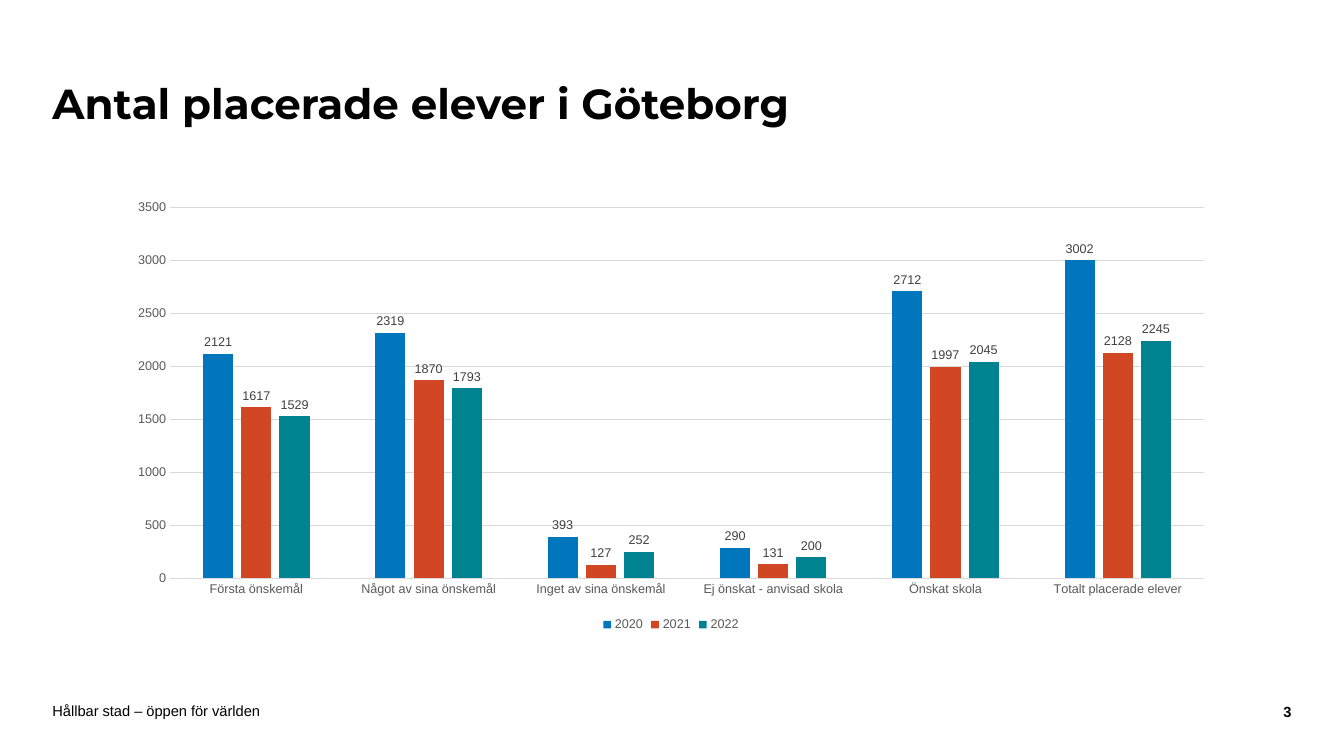
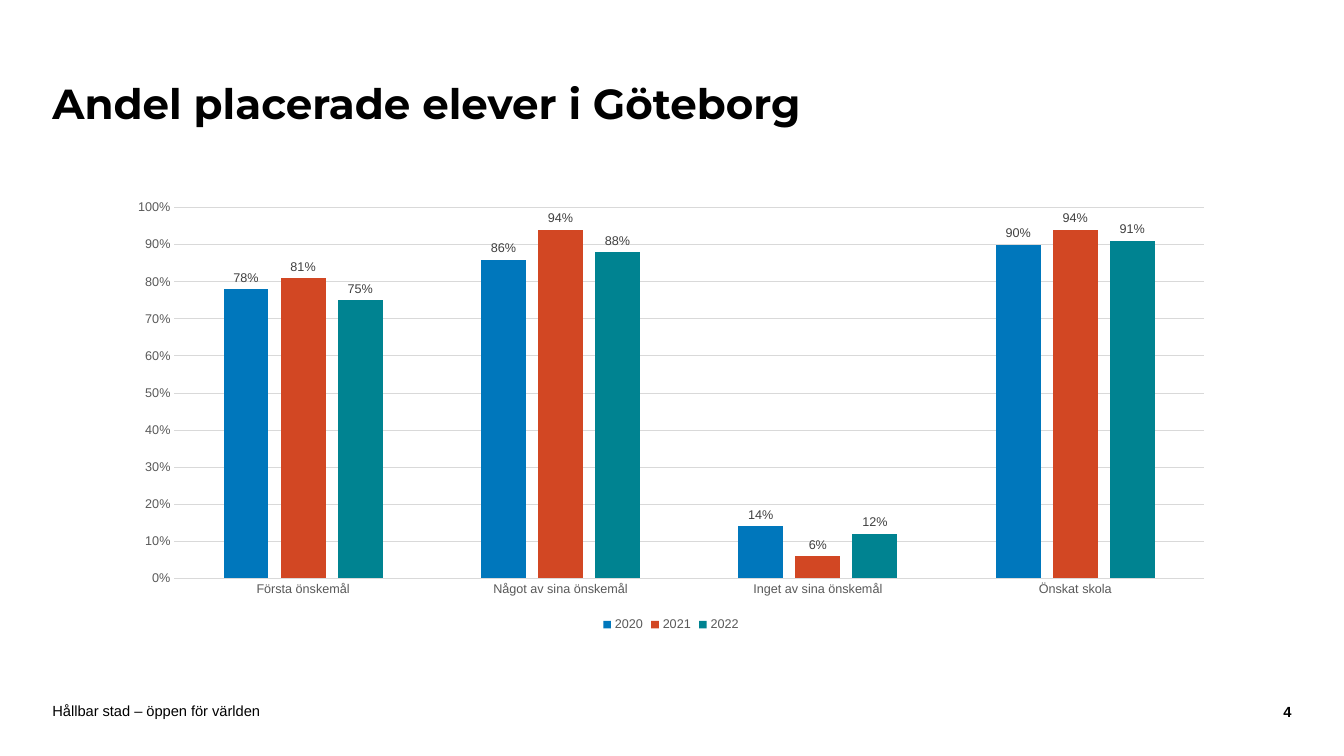
"""Build two column-chart slides on school placements in Göteborg."""
from pptx import Presentation
from pptx.chart.data import CategoryChartData as ChartData
from pptx.dml.color import RGBColor as Color
from pptx.enum.chart import XL_CHART_TYPE as ChartType
from pptx.enum.chart import XL_LABEL_POSITION as LabelPosition
from pptx.enum.chart import XL_LEGEND_POSITION as LegendPosition
from pptx.enum.chart import XL_TICK_MARK as TickMark
from pptx.enum.text import MSO_ANCHOR as Anchor
from pptx.enum.text import MSO_AUTO_SIZE as AutoSize
from pptx.enum.text import PP_ALIGN as Align
from pptx.util import Inches, Pt

WIDTH, HEIGHT = Inches(13.33), Inches(7.5)
COLORS = {
    "text": "000000", "axis": "595959", "label": "404040", "grid": "D9D9D9",
    "2020": "0077BC", "2021": "D24723", "2022": "008391",
}
HEADING_FONT, BODY_FONT = "Montserrat", "Arial"
FOOTER = "Hållbar stad – öppen för världen"
FIRST_NUMBER = 3

# Left, top, width and height in percent of the slide.
AREAS = {
    "title": (3.9, 5.6, 75.24, 16.8),
    "chart": (8.63, 25.33, 82.6, 58.8),
    "footer": (3.9, 92.93, 70.9, 2.13),
    "number": (91.3, 93.07, 4.8, 2.13),
}

SLIDES = [
    {
        "title": "Antal placerade elever i Göteborg",
        "categories": ["Första önskemål", "Något av sina önskemål",
                       "Inget av sina önskemål", "Ej önskat - anvisad skola",
                       "Önskat skola", "Totalt placerade elever"],
        "series": {"2020": [2121, 2319, 393, 290, 2712, 3002],
                   "2021": [1617, 1870, 127, 131, 1997, 2128],
                   "2022": [1529, 1793, 252, 200, 2045, 2245]},
        "format": "General", "maximum": 3500, "step": 500,
    },
    {
        "title": "Andel placerade elever i Göteborg",
        "categories": ["Första önskemål", "Något av sina önskemål",
                       "Inget av sina önskemål", "Önskat skola"],
        "series": {"2020": [0.78, 0.86, 0.14, 0.9],
                   "2021": [0.81, 0.94, 0.06, 0.94],
                   "2022": [0.75, 0.88, 0.12, 0.91]},
        "format": "0%", "maximum": 1, "step": 0.1,
    },
]


def area(name):
    """Return the named area in slide units."""
    sizes = (WIDTH, HEIGHT, WIDTH, HEIGHT)
    return [round(size * share / 100) for size, share in zip(sizes, AREAS[name])]


def style_font(font, size, color="text", name=BODY_FONT, bold=False):
    """Set the face, size, weight and colour of a font."""
    font.name, font.size, font.bold = name, Pt(size), bold
    font.color.rgb = Color.from_string(COLORS[color])


def style_line(line):
    """Give a chart line the thin grey grid look."""
    line.color.rgb = Color.from_string(COLORS["grid"])
    line.width = Pt(0.75)


def write(box, text, size, align=Align.LEFT, inset=0, **font):
    """Write one middle-anchored line into a box and return its paragraph."""
    frame = box.text_frame
    frame.word_wrap = True
    frame.auto_size = AutoSize.NONE
    frame.vertical_anchor = Anchor.MIDDLE
    frame.margin_left = frame.margin_right = 0
    frame.margin_top = frame.margin_bottom = Inches(inset)
    para = frame.paragraphs[0]
    para.alignment = align
    span = para.add_run()
    span.text = text
    style_font(span.font, size, **font)
    return para


def add_title(page, text):
    """Place and fill the title placeholder."""
    title = page.shapes.title
    title.left, title.top, title.width, title.height = area("title")
    para = write(title, text, 30, inset=0.05, name=HEADING_FONT, bold=True)
    para.line_spacing = 0.9


def add_footer(page, number):
    """Add the footer line and the page number."""
    write(page.shapes.add_textbox(*area("number")), str(number), 10.5,
          align=Align.RIGHT, bold=True)
    write(page.shapes.add_textbox(*area("footer")), FOOTER, 10.5)


def style_axes(chart, content):
    """Format both axes and the gridlines."""
    for axis in (chart.category_axis, chart.value_axis):
        axis.major_tick_mark = axis.minor_tick_mark = TickMark.NONE
        style_font(axis.tick_labels.font, 9, "axis")
    style_line(chart.category_axis.format.line)
    values = chart.value_axis
    values.format.line.fill.background()
    values.has_major_gridlines = True
    style_line(values.major_gridlines.format.line)
    values.minimum_scale, values.maximum_scale = 0, content["maximum"]
    values.major_unit = content["step"]
    values.tick_labels.number_format = content["format"]
    values.tick_labels.number_format_is_linked = False


def style_series(series, number_format):
    """Colour a series and label its columns."""
    series.format.fill.solid()
    series.format.fill.fore_color.rgb = Color.from_string(COLORS[series.name])
    series.invert_if_negative = False
    labels = series.data_labels
    labels.show_value = True
    labels.position = LabelPosition.OUTSIDE_END
    labels.number_format = number_format
    labels.number_format_is_linked = False
    style_font(labels.font, 9, "label")


def add_columns(page, content):
    """Add the clustered column chart."""
    data = ChartData(number_format=content["format"])
    data.categories = content["categories"]
    for year, values in content["series"].items():
        data.add_series(year, values)
    chart = page.shapes.add_chart(
        ChartType.COLUMN_CLUSTERED, *area("chart"), data).chart
    style_font(chart.font, 10)
    chart.has_title = False
    chart.has_legend = True
    chart.legend.position = LegendPosition.BOTTOM
    chart.legend.include_in_layout = False
    style_font(chart.legend.font, 9, "axis")
    style_axes(chart, content)
    plot = chart.plots[0]
    plot.gap_width, plot.overlap = 219, -27
    plot.vary_by_categories = False
    for series in plot.series:
        style_series(series, content["format"])


def main():
    """Build and save the deck."""
    deck = Presentation()
    deck.slide_width, deck.slide_height = WIDTH, HEIGHT
    title_only = deck.slide_layouts.get_by_name("Title Only")
    for number, content in enumerate(SLIDES, FIRST_NUMBER):
        page = deck.slides.add_slide(title_only)
        add_footer(page, number)
        add_title(page, content["title"])
        add_columns(page, content)
    deck.save("out.pptx")


if __name__ == "__main__":
    main()
